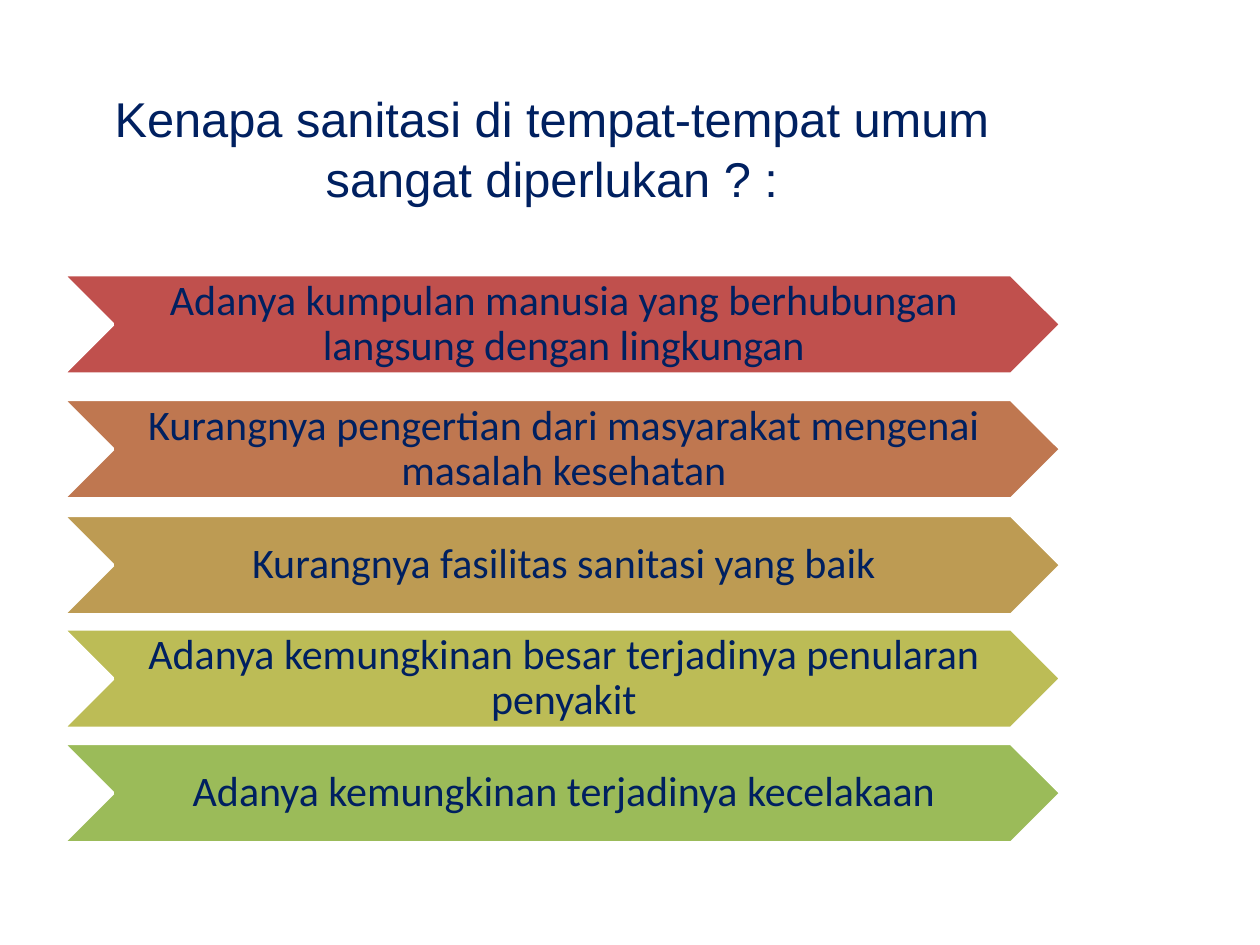
from pptx import Presentation
from pptx.dml.color import RGBColor
from pptx.enum.shapes import MSO_SHAPE
from pptx.enum.text import MSO_ANCHOR, PP_ALIGN
from pptx.util import Inches, Pt

TITLE = "Kenapa sanitasi di tempat-tempat umum sangat diperlukan ? :"
REASONS = [
    (2.18, "C0504D", "Adanya kumpulan manusia yang berhubungan langsung dengan lingkungan"),
    (3.17, "BF7750", "Kurangnya pengertian dari masyarakat mengenai masalah kesehatan"),
    (4.09, "BD9B53", "Kurangnya fasilitas sanitasi yang baik"),
    (4.99, "BCBC56", "Adanya kemungkinan besar terjadinya penularan penyakit"),
    (5.9, "9BBB59", "Adanya kemungkinan terjadinya kecelakaan"),
]
NAVY, WHITE = "002060", "FFFFFF"
WIDTH, CHEVRON_HEIGHT = 7.92, 0.79


def color(hex_value):
    return RGBColor.from_string(hex_value)


def place(shape, left, top, width, height):
    shape.left, shape.top = Inches(left), Inches(top)
    shape.width, shape.height = Inches(width), Inches(height)


def write(shape, text, font_name, size, spacing, insets):
    frame = shape.text_frame
    frame.text = text
    frame.word_wrap = True
    frame.vertical_anchor = MSO_ANCHOR.MIDDLE
    (frame.margin_left, frame.margin_top,
     frame.margin_right, frame.margin_bottom) = map(Inches, insets)
    paragraph = frame.paragraphs[0]
    paragraph.alignment = PP_ALIGN.CENTER
    paragraph.line_spacing = spacing
    font = paragraph.runs[0].font
    font.name, font.size = font_name, Pt(size)
    font.color.rgb = color(NAVY)


def add_reason(slide, top, fill, text):
    chevron = slide.shapes.add_shape(
        MSO_SHAPE.CHEVRON, Inches(0.5), Inches(top), Inches(WIDTH), Inches(CHEVRON_HEIGHT))
    chevron.shadow.inherit = False
    chevron.fill.solid()
    chevron.fill.fore_color.rgb = color(fill)
    chevron.line.color.rgb = color(WHITE)
    chevron.line.width = Pt(2)
    write(chevron, text, "Calibri", 24, 0.9, (0.03, 0.02, 0, 0.02))


def main():
    """Build the slide on why sanitation in public places is needed."""
    presentation = Presentation()
    presentation.slide_width, presentation.slide_height = Inches(10), Inches(7.5)
    slide = presentation.slides.add_slide(presentation.slide_layouts[5])
    title = slide.shapes.title
    place(title, 0.42, 0.83, WIDTH, 1.25)
    write(title, TITLE, "Arial", 27.9, 1.03, (0.1, 0, 0.1, 0.58))
    for top, fill, text in REASONS:
        add_reason(slide, top, fill, text)
    presentation.save("out.pptx")


if __name__ == "__main__":
    main()
